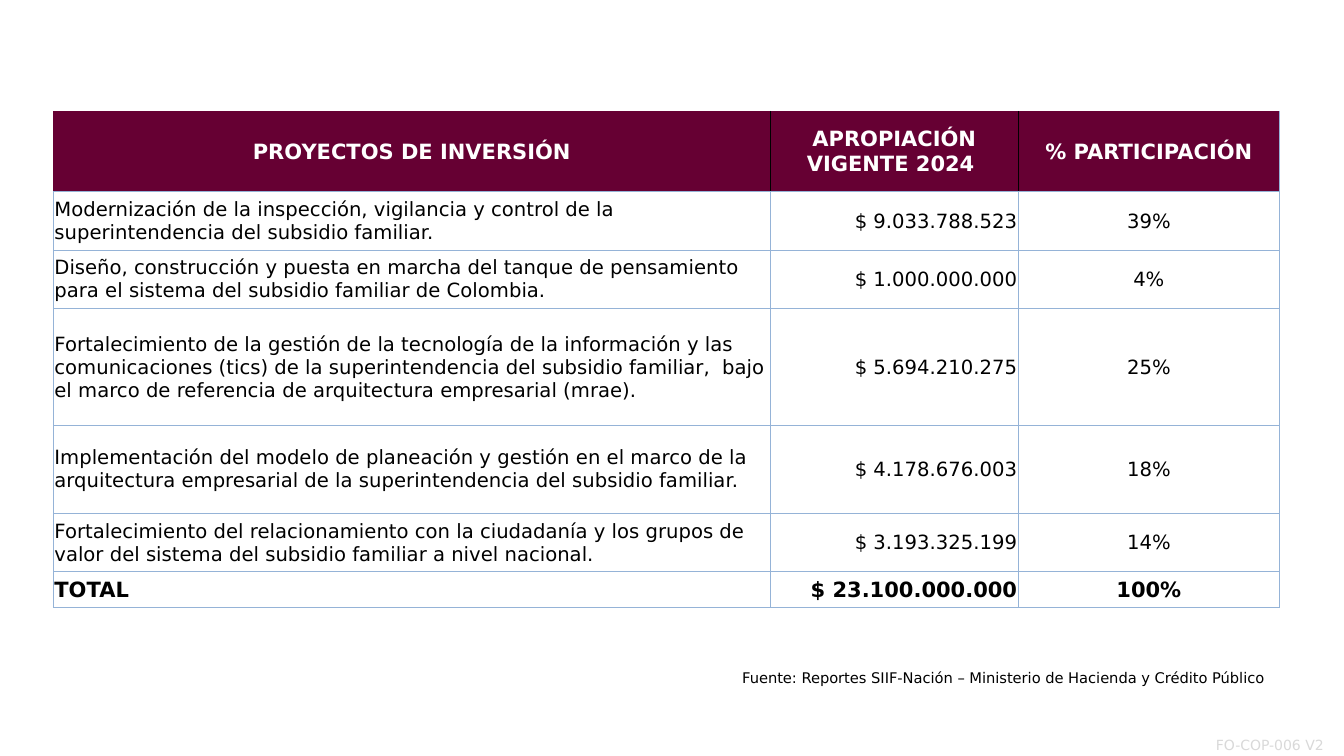
from dataclasses import dataclass
from typing import Optional

import pptx
import pptx.dml.color
import pptx.enum.text
import pptx.oxml.ns
import pptx.oxml.xmlchemy
import pptx.table
import pptx.util
from lxml import etree
from pptx.dml.color import RGBColor
from pptx.enum.text import MSO_ANCHOR, PP_ALIGN
from pptx.util import Inches

WINE = RGBColor(0x66, 0x00, 0x33)
WHITE = RGBColor(0xFF, 0xFF, 0xFF)
BLACK = RGBColor(0x00, 0x00, 0x00)
GRID_BLUE = RGBColor(0x95, 0xB3, 0xD7)
CODE_GRAY = RGBColor(0xD9, 0xD9, 0xD9)
FONT_NAME = "DejaVu Sans"
BORDER_WIDTH = pptx.util.Pt(0.5)
COLUMN_WIDTHS = (7.11, 2.46, 2.59)
COLUMN_ALIGNMENTS = (PP_ALIGN.LEFT, PP_ALIGN.RIGHT, PP_ALIGN.CENTER)


@dataclass(frozen=True)
class TextStyle:
    size: float
    color: RGBColor = BLACK
    bold: bool = False


@dataclass(frozen=True)
class BudgetRow:
    height: float
    values: tuple[str, str, str]
    style: TextStyle = TextStyle(14)
    is_header: bool = False


BUDGET_ROWS = (
    BudgetRow(0.8, ("PROYECTOS DE INVERSIÓN", "APROPIACIÓN VIGENTE 2024 ", "% PARTICIPACIÓN"),
              TextStyle(15, WHITE, True), True),
    BudgetRow(0.58, ("Modernización de la inspección, vigilancia y control de la "
                     "superintendencia del subsidio familiar.", "$ 9.033.788.523", "39%")),
    BudgetRow(0.58, ("Diseño, construcción y puesta en marcha del tanque de pensamiento "
                     "para el sistema del subsidio familiar de Colombia.", "$ 1.000.000.000", "4%")),
    BudgetRow(1.16, ("Fortalecimiento de la gestión de la tecnología de la información y las "
                     "comunicaciones (tics) de la superintendencia del subsidio familiar,  bajo "
                     "el marco de referencia de arquitectura empresarial (mrae).",
                     "$ 5.694.210.275", "25%")),
    BudgetRow(0.87, ("Implementación del modelo de planeación y gestión en el marco de la "
                     "arquitectura empresarial de la superintendencia del subsidio familiar.",
                     "$ 4.178.676.003", "18%")),
    BudgetRow(0.58, ("Fortalecimiento del relacionamiento con la ciudadanía y los grupos de "
                     "valor del sistema del subsidio familiar a nivel nacional.",
                     "$ 3.193.325.199", "14%")),
    BudgetRow(0.36, ("TOTAL", "$ 23.100.000.000", "100%"), TextStyle(15, BLACK, True)),
)


def write_text(text_frame: pptx.text.text.TextFrame, text: str, style: TextStyle,
               alignment: PP_ALIGN) -> None:
    text_frame.text = text
    text_frame.word_wrap = True
    paragraph = text_frame.paragraphs[0]
    paragraph.alignment = alignment
    font = paragraph.runs[0].font
    font.name = FONT_NAME
    font.size = pptx.util.Pt(style.size)
    font.bold = style.bold
    font.color.rgb = style.color


def set_border(cell: pptx.table._Cell, side: str, color: Optional[RGBColor]) -> None:
    properties = cell._tc.get_or_add_tcPr()
    line = etree.SubElement(properties, pptx.oxml.ns.qn(f"a:ln{side}"), w=str(BORDER_WIDTH))
    if color is None:
        etree.SubElement(line, pptx.oxml.ns.qn("a:noFill"))
    else:
        fill = etree.SubElement(line, pptx.oxml.ns.qn("a:solidFill"))
        etree.SubElement(fill, pptx.oxml.ns.qn("a:srgbClr"), val=str(color))


def header_borders(column: int) -> dict[str, Optional[RGBColor]]:
    last_column = len(COLUMN_WIDTHS) - 1
    return {"L": BLACK if column > 0 else None,
            "R": BLACK if column < last_column else GRID_BLUE,
            "T": None, "B": GRID_BLUE}


def style_cell(cell: pptx.table._Cell, fill: RGBColor,
               borders: dict[str, Optional[RGBColor]], bottom_margin: float) -> None:
    cell.margin_left = cell.margin_right = cell.margin_top = Inches(0.01)
    cell.margin_bottom = Inches(bottom_margin)
    for side, color in borders.items():
        set_border(cell, side, color)
    cell.fill.solid()
    cell.fill.fore_color.rgb = fill


def add_plain_table(slide: pptx.slide.Slide, left: float, top: float,
                    widths: tuple[float, ...], heights: tuple[float, ...]) -> pptx.table.Table:
    table = slide.shapes.add_table(len(heights), len(widths), Inches(left), Inches(top),
                                   Inches(sum(widths)), Inches(sum(heights))).table
    table.first_row = False
    table.horz_banding = False
    for column, width in zip(table.columns, widths):
        column.width = Inches(width)
    for row, height in zip(table.rows, heights):
        row.height = Inches(height)
    return table


def add_form_code(slide: pptx.slide.Slide) -> None:
    cell = add_plain_table(slide, 12.05, 7.2, (1.29,), (0.3,)).cell(0, 0)
    write_text(cell.text_frame, "FO-COP-006 V2", TextStyle(10, CODE_GRAY), PP_ALIGN.LEFT)
    style_cell(cell, WHITE, dict.fromkeys("LRTB"), 0.02)
    cell.vertical_anchor = MSO_ANCHOR.BOTTOM


def add_budget_table(slide: pptx.slide.Slide) -> None:
    heights = tuple(row.height for row in BUDGET_ROWS)
    table = add_plain_table(slide, 0.53, 1.1, COLUMN_WIDTHS, heights)
    for row_index, row in enumerate(BUDGET_ROWS):
        for column, value in enumerate(row.values):
            cell = table.cell(row_index, column)
            alignment = PP_ALIGN.CENTER if row.is_header else COLUMN_ALIGNMENTS[column]
            borders = header_borders(column) if row.is_header else dict.fromkeys("LRTB", GRID_BLUE)
            write_text(cell.text_frame, value, row.style, alignment)
            style_cell(cell, WINE if row.is_header else WHITE, borders, 0)
            cell.vertical_anchor = MSO_ANCHOR.MIDDLE


def add_source_note(slide: pptx.slide.Slide) -> None:
    box = slide.shapes.add_textbox(Inches(5.62), Inches(6.59), Inches(7.07), Inches(0.47))
    write_text(box.text_frame,
               "Fuente: Reportes SIIF-Nación – Ministerio de Hacienda y Crédito Público ",
               TextStyle(10.5), PP_ALIGN.RIGHT)


def main() -> None:
    presentation = pptx.Presentation()
    presentation.slide_width = Inches(13.33)
    presentation.slide_height = Inches(7.5)
    slide = presentation.slides.add_slide(presentation.slide_layouts[6])
    add_form_code(slide)
    add_budget_table(slide)
    add_source_note(slide)
    presentation.save("out.pptx")


if __name__ == "__main__":
    main()
